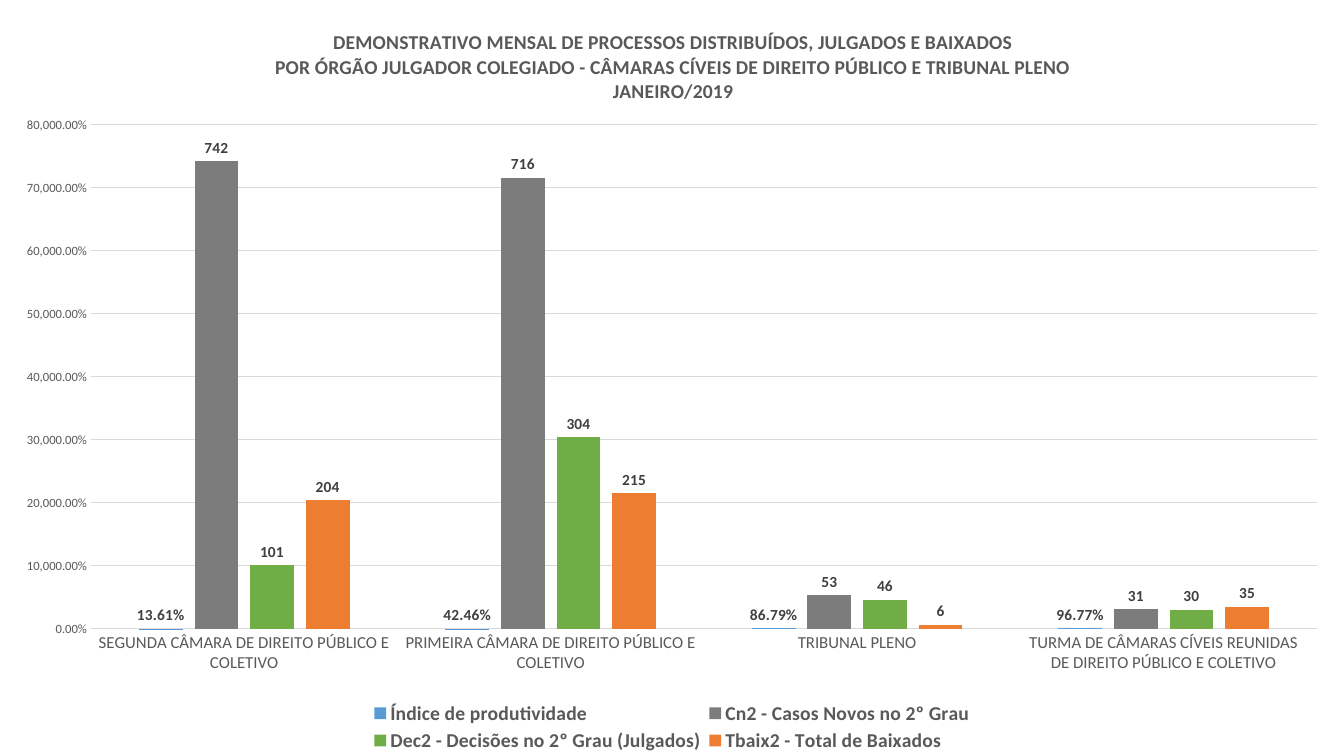
"""Build the slide with the monthly chart of court cases."""
from lxml import etree
from pptx import Presentation
from pptx.chart.data import CategoryChartData
from pptx.dml.color import RGBColor
from pptx.enum.chart import (
    XL_CHART_TYPE, XL_LABEL_POSITION, XL_LEGEND_POSITION, XL_TICK_MARK)
from pptx.oxml.ns import qn
from pptx.util import Pt

COLUMN = XL_CHART_TYPE.COLUMN_CLUSTERED
ABOVE = XL_LABEL_POSITION.OUTSIDE_END
BOTTOM = XL_LEGEND_POSITION.BOTTOM
NO_TICK = XL_TICK_MARK.NONE

PX = 9072
WIDE, HIGH = 1344, 756
FONT = "Calibri"
TEXT = RGBColor(0x59, 0x59, 0x59)
DARK = RGBColor(0x40, 0x40, 0x40)
PALE = RGBColor(0xD9, 0xD9, 0xD9)
BLUE = RGBColor(0x5B, 0x9B, 0xD5)
GRAY = RGBColor(0x7C, 0x7C, 0x7C)
GREEN = RGBColor(0x70, 0xAD, 0x47)
ORANGE = RGBColor(0xED, 0x7D, 0x31)

TITLE = (
    "DEMONSTRATIVO MENSAL DE PROCESSOS DISTRIBUÍDOS, JULGADOS E BAIXADOS",
    "POR ÓRGÃO JULGADOR COLEGIADO - CÂMARAS CÍVEIS DE DIREITO PÚBLICO E TRIBUNAL PLENO",
    "JANEIRO/2019",
)
COURTS = (
    "SEGUNDA CÂMARA DE DIREITO PÚBLICO E COLETIVO",
    "PRIMEIRA CÂMARA DE DIREITO PÚBLICO E COLETIVO",
    "TRIBUNAL PLENO",
    "TURMA DE CÂMARAS CÍVEIS REUNIDAS DE DIREITO PÚBLICO E COLETIVO",
)
SERIES = (
    ("Índice de produtividade", (0.1361, 0.4246, 0.8679, 0.9677), BLUE, "0.00%"),
    ("Cn2 - Casos Novos no 2º Grau", (742, 716, 53, 31), GRAY, "0"),
    ("Dec2 - Decisões no 2º Grau (Julgados)", (101, 304, 46, 30), GREEN, "0"),
    ("Tbaix2 - Total de Baixados", (204, 215, 6, 35), ORANGE, "0"),
)


def style(font, size, color=TEXT, bold=False):
    """Set the face, size, colour and weight of a font."""
    font.name, font.size, font.bold = FONT, Pt(size), bold
    font.color.rgb = color


def place(part, index, left, top, width=None, height=None, inner=False):
    """Fix the place of a chart part, given in px."""
    for old in part.findall(qn("c:layout")):
        part.remove(old)
    layout = etree.Element(qn("c:layout"))
    manual = etree.SubElement(layout, qn("c:manualLayout"))
    rows = [("layoutTarget", "inner")] if inner else []
    rows += [("xMode", "edge"), ("yMode", "edge"),
             ("x", left / WIDE), ("y", top / HIGH)]
    if width:
        rows += [("w", width / WIDE), ("h", height / HIGH)]
    for tag, value in rows:
        etree.SubElement(manual, qn("c:" + tag)).set("val", str(value))
    part.insert(index, layout)


def add_title(chart):
    """Write the chart title, one paragraph a line."""
    frame = chart.chart_title.text_frame
    for i, line in enumerate(TITLE):
        para = frame.add_paragraph() if i else frame.paragraphs[0]
        run = para.add_run()
        run.text = line
        style(run.font, 14, bold=True)
    place(chart.chart_title._element, 1, 272, 26)


def set_axes(chart):
    """Format both axes and the grid."""
    courts, scale = chart.category_axis, chart.value_axis
    for axis, size in ((courts, 12), (scale, 9)):
        axis.major_tick_mark = axis.minor_tick_mark = NO_TICK
        style(axis.tick_labels.font, size)
    scale.minimum_scale, scale.maximum_scale, scale.major_unit = 0, 800, 100
    scale.tick_labels.number_format = "#,##0.00%"
    scale.tick_labels.number_format_is_linked = False
    scale.format.line.fill.background()
    for line in (courts.format.line, scale.major_gridlines.format.line):
        line.color.rgb = PALE
        line.width = Pt(0.75)


def set_bars(plot):
    """Colour and label the bars."""
    plot.gap_width, plot.overlap = 219, -27
    plot.vary_by_categories = False
    for bars, (_, _, color, form) in zip(plot.series, SERIES):
        bars.format.fill.solid()
        bars.format.fill.fore_color.rgb = color
        bars.invert_if_negative = False
        labels = bars.data_labels
        labels.show_value = True
        labels.position = ABOVE
        labels.number_format = form
        labels.number_format_is_linked = False
        style(labels.font, 11, DARK, True)


def add_key(chart):
    """Show the legend in two columns."""
    chart.has_legend = True
    key = chart.legend
    key.position = BOTTOM
    key.include_in_layout = False
    style(key.font, 14, bold=True)
    place(key._element, 1, 366, 698, 612, 58)


def add_cases(slide):
    """Add the chart over the whole slide."""
    data = CategoryChartData()
    data.categories = COURTS
    for name, values, _, form in SERIES:
        data.add_series(name, values, form)
    chart = slide.shapes.add_chart(
        COLUMN, 0, 0, WIDE * PX, HIGH * PX, data).chart
    style(chart.font, 10)
    add_title(chart)
    set_axes(chart)
    set_bars(chart.plots[0])
    add_key(chart)
    area = chart._chartSpace.find(".//" + qn("c:plotArea"))
    place(area, 0, 91, 125, 1226, 504, inner=True)


def main():
    """Build and save the deck."""
    deck = Presentation()
    deck.slide_width, deck.slide_height = WIDE * PX, HIGH * PX
    add_cases(deck.slides.add_slide(deck.slide_layouts[6]))
    deck.save("out.pptx")


if __name__ == "__main__":
    main()
